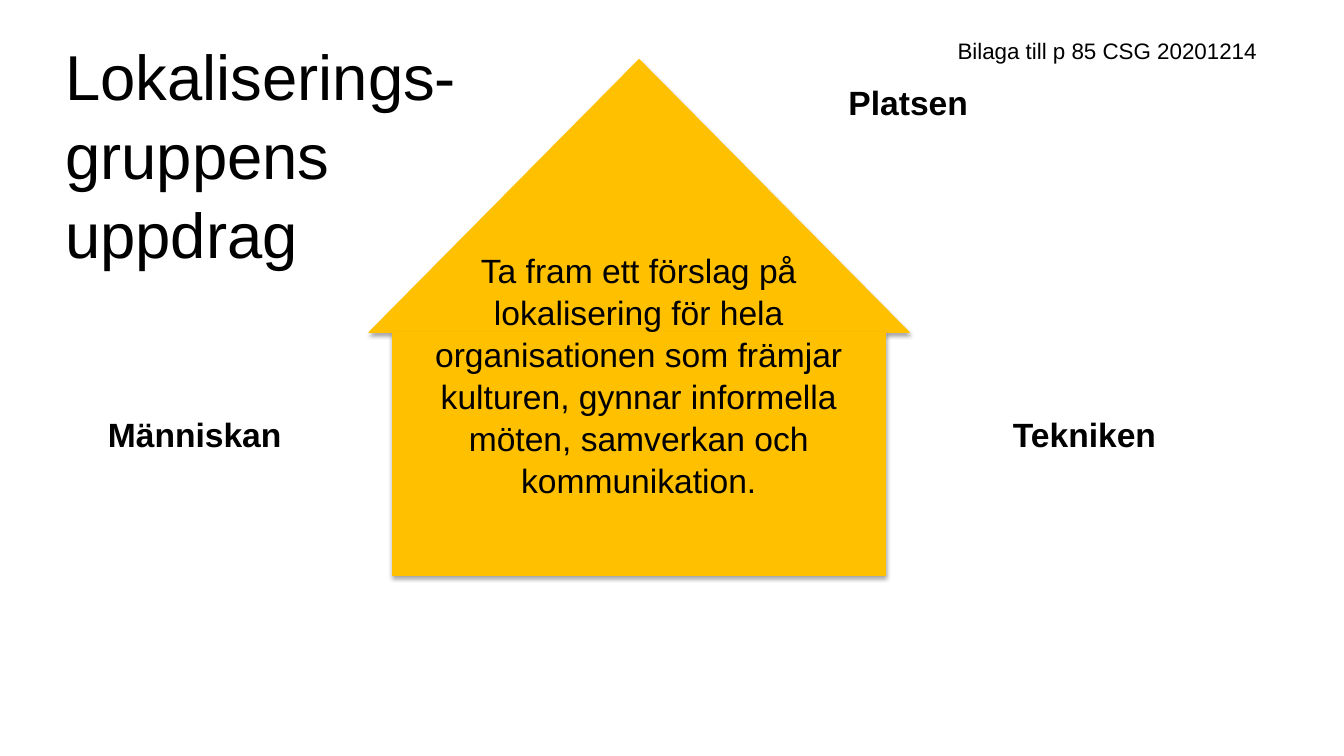
from dataclasses import dataclass

from lxml import etree
from pptx import Presentation
from pptx.dml.color import RGBColor
from pptx.enum.shapes import MSO_SHAPE
from pptx.enum.text import MSO_ANCHOR, MSO_AUTO_SIZE, PP_ALIGN
from pptx.oxml.ns import qn
from pptx.slide import Slide
from pptx.util import Pt

TRIANGLE, RECTANGLE = MSO_SHAPE.ISOSCELES_TRIANGLE, MSO_SHAPE.RECTANGLE
LEFT, CENTER = PP_ALIGN.LEFT, PP_ALIGN.CENTER
TOP, MIDDLE = MSO_ANCHOR.TOP, MSO_ANCHOR.MIDDLE
FIXED, GROW = MSO_AUTO_SIZE.NONE, MSO_AUTO_SIZE.SHAPE_TO_FIT_TEXT


@dataclass(frozen=True)
class Theme:
    font: str = "Arial"
    text: RGBColor = RGBColor(0, 0, 0)
    house: RGBColor = RGBColor(0xFF, 0xC0, 0x00)
    shadow: str = "000000"
    title_size: float = 45.3
    body_size: float = 24
    note_size: float = 16
    line_spacing: float = 1.04


THEME = Theme()


@dataclass(frozen=True)
class HousePart:
    kind: MSO_SHAPE
    left: float
    top: float
    width: float
    height: float


@dataclass(frozen=True)
class Label:
    text: str
    left: float
    top: float
    width: float
    height: float
    size: float = THEME.body_size
    bold: bool = False
    align: PP_ALIGN = LEFT
    anchor: MSO_ANCHOR = TOP
    wrap: bool = True
    fit: MSO_AUTO_SIZE = GROW
    inset_top: float = 3.6


def keyword(text: str, left: float, top: float, width: float) -> Label:
    return Label(text, left, top, width, 36, bold=True, wrap=False)


HOUSE = [
    HousePart(TRIANGLE, 263.5, 42.5, 386, 195),
    HousePart(RECTANGLE, 280.5, 237.5, 352, 173.5),
]

LABELS = [
    Label("Lokaliserings-gruppens uppdrag", 39.6, 18, 295.2, 48.2,
          size=THEME.title_size, fit=FIXED, inset_top=6.5),
    Label("Ta fram ett förslag på lokalisering för hela organisationen som "
          "främjar kulturen, gynnar informella möten, samverkan och "
          "kommunikation.", 296, 174, 320.4, 203.8, align=CENTER),
    keyword("Platsen", 599, 54, 100.8),
    keyword("Människan", 70, 291, 139.7),
    keyword("Tekniken", 716.4, 291, 118),
    Label("Bilaga till p 85 CSG 20201214", 658, 28.8, 265.7, 14.4,
          size=THEME.note_size, align=CENTER, anchor=MIDDLE, fit=FIXED),
]


def add_house_part(page: Slide, part: HousePart) -> None:
    shape = page.shapes.add_shape(part.kind, Pt(part.left), Pt(part.top),
                                  Pt(part.width), Pt(part.height))
    shape.fill.solid()
    shape.fill.fore_color.rgb = THEME.house
    shape.line.color.rgb = THEME.house
    shape.line.width = Pt(0.75)
    # Soft shadow straight below
    shape.shadow.inherit = False
    effects = shape.element.spPr.find(qn("a:effectLst"))
    shadow = etree.SubElement(effects, qn("a:outerShdw"), blurRad=str(Pt(3.1)),
                              dist=str(Pt(1.8)), dir="5400000", rotWithShape="0")
    color = etree.SubElement(shadow, qn("a:srgbClr"), val=THEME.shadow)
    etree.SubElement(color, qn("a:alpha"), val="35000")


def add_label(page: Slide, label: Label) -> None:
    box = page.shapes.add_textbox(Pt(label.left), Pt(label.top),
                                  Pt(label.width), Pt(label.height))
    frame = box.text_frame
    frame.word_wrap = label.wrap
    frame.auto_size = label.fit
    frame.vertical_anchor = label.anchor
    frame.margin_top = Pt(label.inset_top)
    para = frame.paragraphs[0]
    para.alignment = label.align
    para.line_spacing = THEME.line_spacing
    span = para.add_run()
    span.text = label.text
    span.font.name = THEME.font
    span.font.size = Pt(label.size)
    span.font.bold = label.bold
    span.font.color.rgb = THEME.text


def main() -> None:
    deck = Presentation()
    deck.slide_width, deck.slide_height = Pt(960), Pt(540)
    page = deck.slides.add_slide(deck.slide_layouts[6])
    # House: roof and wall
    for part in HOUSE:
        add_house_part(page, part)
    # Title, assignment, keywords and reference
    for label in LABELS:
        add_label(page, label)
    deck.save("out.pptx")


if __name__ == "__main__":
    main()
